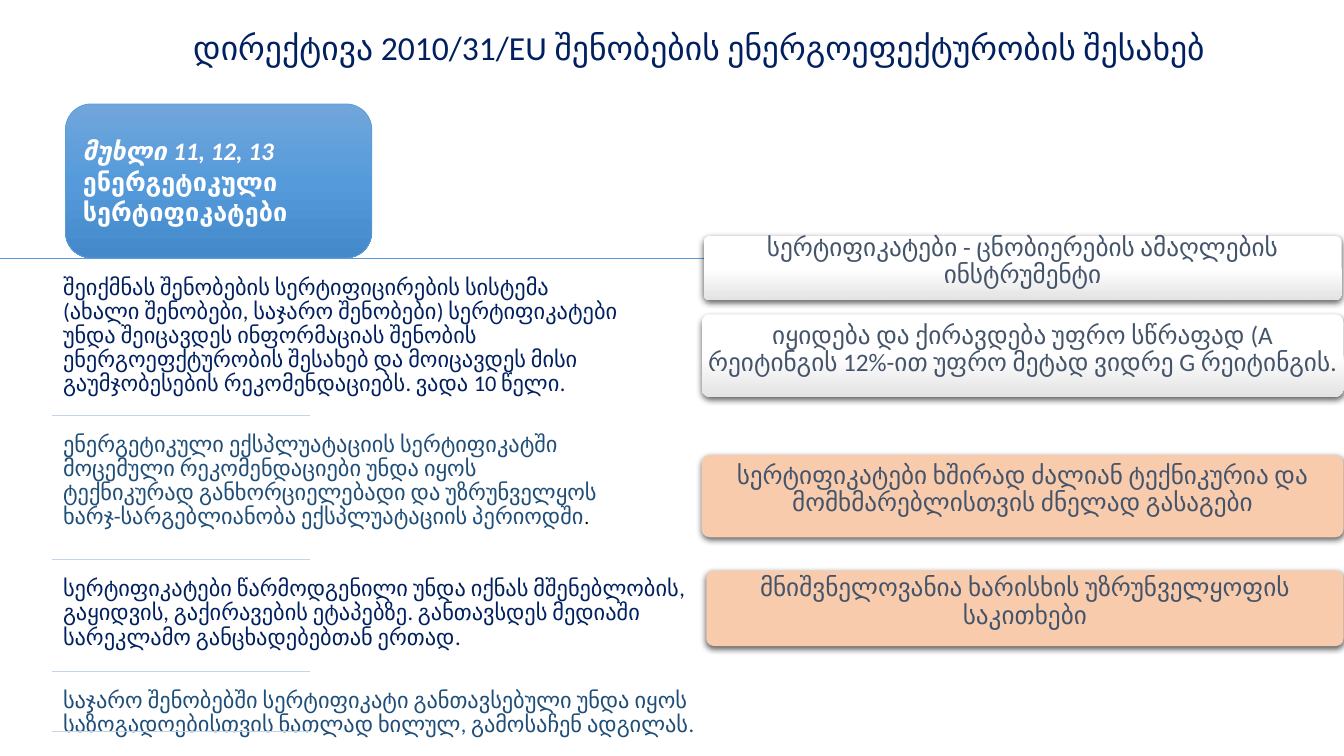
"""Build the slide on energy certificates under Directive 2010/31/EU."""
import copy

import lxml.etree
import pptx
import pptx.dml.color
import pptx.enum.shapes
import pptx.enum.text
import pptx.oxml.ns
import pptx.util

Cm = pptx.util.Cm
Pt = pptx.util.Pt
ALIGN = pptx.enum.text.PP_ALIGN
ANCHOR = pptx.enum.text.MSO_ANCHOR
qn = pptx.oxml.ns.qn

COLORS = {
    "navy": "002060", "teal": "1F4E79", "slate": "44546A", "white": "FFFFFF",
    "black": "000000", "blue": "5B9BD5", "rule": "C4D5EB", "peach": "F8CBAD",
}
BLUE_FADE = ("71A6DB", "559BDB", "448ACA")
GREY_FADE = ("FFFFFF", "FFFFFF", "E3E3E3")

HEADER_RULE = 6.5
ROW_GAP = 0.28
ROWS = [
    (10.46, 14.58, "navy", ["შეიქმნას შენობების სერტიფიცირების სისტემა (ახალი შენობები, საჯარო შენობები) "
     "სერტიფიკატები უნდა შეიცავდეს ინფორმაციას შენობის ენერგოეფქტურობის შესახებ და მოიცავდეს "
     "მისი გაუმჯობესების რეკომენდაციებს. ვადა 10 წელი."]),
    (14.1, 14.02, "teal", ["ენერგეტიკული ექსპლუატაციის სერტიფიკატში მოცემული რეკომენდაციები უნდა იყოს "
     "ტექნიკურად განხორციელებადი და უზრუნველყოს ხარჯ-სარგებლიანობა ექსპლუატაციის პერიოდში", "."]),
    (16.92, 16.33, "navy", ["სერტიფიკატები წარმოდგენილი უნდა იქნას მშენებლობის, გაყიდვის, გაქირავების "
     "ეტაპებზე. განთავსდეს მედიაში სარეკლამო განცხადებებთან ერთად."]),
    (18.44, 18.08, "teal", ["საჯარო შენობებში სერტიფიკატი განთავსებული უნდა იყოს საზოგადოებისთვის ნათლად "
     "ხილულ, გამოსაჩენ ადგილას."]),
]
CARDS = [
    ((17.73, 5.94, 16.08, 1.63), GREY_FADE, "სერტიფიკატები - ცნობიერების ამაღლების ინსტრუმენტი"),
    ((17.68, 7.92, 16.18, 2.08), GREY_FADE,
     "იყიდება და ქირავდება უფრო სწრაფად (A რეიტინგის 12%-ით უფრო მეტად ვიდრე G რეიტინგის."),
    ((17.68, 11.46, 16.18, 2.08), "peach",
     "სერტიფიკატები ხშირად ძალიან ტექნიკურია და მომხმარებლისთვის ძნელად გასაგები"),
    ((17.8, 14.38, 16.06, 1.9), "peach", "მნიშვნელოვანია ხარისხის უზრუნველყოფის საკითხები"),
]


def rgb(color):
    """Return the colour for a palette name or a hex string."""
    return pptx.dml.color.RGBColor.from_string(COLORS.get(color, color))


class SlideBuilder:
    """Hold the style and the current slide."""

    font = "Calibri"

    def __init__(self, page):
        """Keep the page to draw on."""
        self.page = page

    def fill_para(self, para, spans, size, color, align=ALIGN.LEFT, spacing=0.9):
        """Fill a paragraph with runs in one shared format."""
        para.alignment = align
        para.line_spacing = spacing
        para.font.name = self.font
        para.font.size = Pt(size)
        para.font.color.rgb = rgb(color)
        for words in spans:
            span = para.add_run()
            span.text = words
        return para

    def frame(self, shape, anchor, insets):
        """Set wrapping, anchor and insets of a text frame."""
        frame = shape.text_frame
        frame.word_wrap = True
        frame.vertical_anchor = anchor
        (frame.margin_left, frame.margin_top,
         frame.margin_right, frame.margin_bottom) = map(Cm, insets)
        return frame

    def title(self, area, words):
        """Move and fill the title placeholder."""
        shape = self.page.shapes.title
        shape.left, shape.top, shape.width, shape.height = map(Cm, area)
        frame = self.frame(shape, ANCHOR.MIDDLE, (0.25, 0.13, 0.25, 0.13))
        self.fill_para(frame.paragraphs[0], [words], 24, "navy", ALIGN.CENTER)

    def rule(self, start, end, y, color):
        """Draw a thin horizontal line."""
        line = self.page.shapes.add_connector(
            pptx.enum.shapes.MSO_CONNECTOR.STRAIGHT, Cm(start), Cm(y), Cm(end), Cm(y))
        line.line.color.rgb = rgb(color)
        line.line.width = Pt(0.5)
        lxml.etree.SubElement(line._element.spPr, qn("a:effectLst"))

    def fade(self, shape, colors):
        """Fill a shape with an even top-to-bottom gradient."""
        shape.fill.gradient()
        shape.fill.gradient_angle = 270
        stops = shape._element.spPr.find(".//" + qn("a:gsLst"))
        while len(stops) < len(colors):
            stops.append(copy.deepcopy(stops[0]))
        for index, (stop, color) in enumerate(zip(shape.fill.gradient_stops, colors)):
            stop.position = index / (len(colors) - 1)
            stop.color.rgb = rgb(color)

    def panel(self, area, fill):
        """Add a rounded rectangle with a plain or gradient fill."""
        shape = self.page.shapes.add_shape(
            pptx.enum.shapes.MSO_SHAPE.ROUNDED_RECTANGLE, *map(Cm, area))
        shape.shadow.inherit = False
        if isinstance(fill, tuple):
            self.fade(shape, fill)
        else:
            shape.fill.solid()
            shape.fill.fore_color.rgb = rgb(fill)
        return shape

    def header(self, area, article, topic):
        """Add the blue panel that names the articles."""
        shape = self.panel(area, BLUE_FADE)
        shape.line.color.rgb = rgb("blue")
        shape.line.width = Pt(0.5)
        frame = self.frame(shape, ANCHOR.MIDDLE, (0.25, 0.13, 0.25, 0.13))
        for para, words in ((frame.paragraphs[0], article), (frame.add_paragraph(), topic)):
            self.fill_para(para, [words], 18, "white", spacing=1.0)
            para.font.bold = True
            para.font.italic = words == article

    def row(self, top, bottom, width, color, spans):
        """Add one requirement, with a small black closing mark if present."""
        box = self.page.shapes.add_textbox(Cm(1.42), Cm(top), Cm(width), Cm(bottom - top))
        frame = self.frame(box, ANCHOR.TOP, (0.17,) * 4)
        para = self.fill_para(frame.paragraphs[0], spans, 16, color)
        for mark in para.runs[1:]:
            mark.font.size = Pt(14)
            mark.font.color.rgb = rgb("black")

    def card(self, area, fill, words):
        """Add a shadowed card with centred text."""
        shape = self.panel(area, fill)
        shape.adjustments[0] = 0.1
        shape.line.fill.background()
        effects = shape._element.spPr.find(qn("a:effectLst"))
        shadow = lxml.etree.SubElement(
            effects, qn("a:outerShdw"), blurRad=str(Pt(4.5)), dist=str(Pt(1.5)),
            dir="5400000", algn="ctr", rotWithShape="0")
        tint = lxml.etree.SubElement(shadow, qn("a:srgbClr"), val=COLORS["black"])
        lxml.etree.SubElement(tint, qn("a:alpha"), val="63000")
        frame = self.frame(shape, ANCHOR.MIDDLE, (0.05, 0.05, 0.05, 0.35))
        self.fill_para(frame.paragraphs[0], [words], 18, "slate", ALIGN.CENTER)


def main():
    """Build and save the deck."""
    deck = pptx.Presentation()
    deck.slide_width, deck.slide_height = Cm(33.87), Cm(19.05)
    builder = SlideBuilder(deck.slides.add_slide(deck.slide_layouts[5]))
    builder.title((2.67, 0.46, 29.9, 1.6), "დირექტივა 2010/31/EU შენობების ენერგოეფექტურობის შესახებ")
    builder.header((1.65, 2.62, 7.72, 3.88), "მუხლი 11, 12, 13", "ენერგეტიკული სერტიფიკატები")
    builder.rule(0, 19.53, HEADER_RULE, "blue")
    above = HEADER_RULE
    for bottom, width, color, spans in ROWS:
        builder.row(above + ROW_GAP, bottom, width, color, spans)
        builder.rule(1.3, 7.8, bottom, "rule")
        above = bottom
    for area, fill, words in CARDS:
        builder.card(area, fill, words)
    deck.save("out.pptx")


if __name__ == "__main__":
    main()
